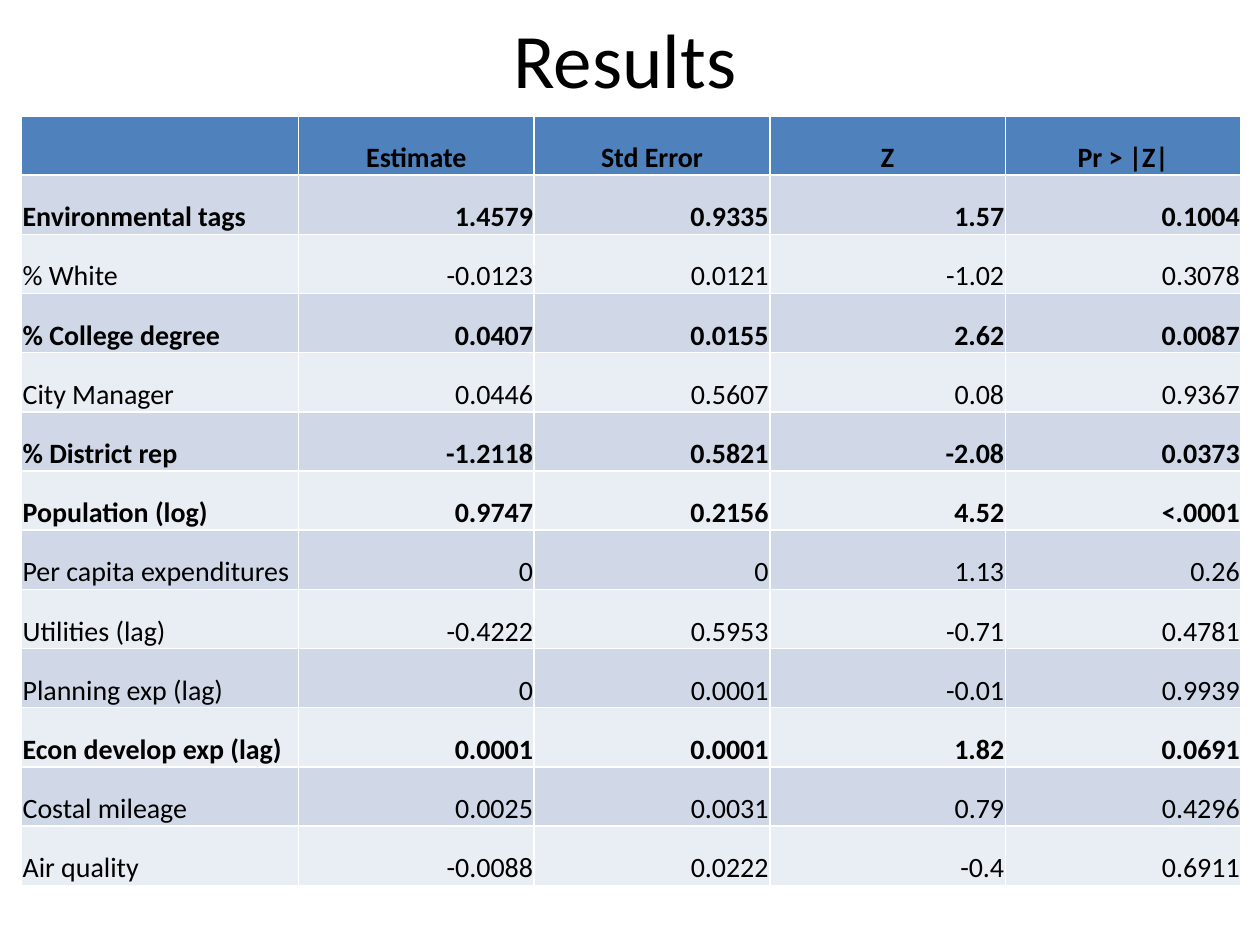
from dataclasses import dataclass
from typing import Any

from pptx import Presentation
from pptx.dml.color import RGBColor
from pptx.enum.text import MSO_ANCHOR, PP_ALIGN
from pptx.util import Inches, Pt


@dataclass
class Row:
    label: str
    values: tuple[str, ...]
    bold: bool = False


HEADER = Row("", ("Estimate", "Std Error", "Z", "Pr > |Z|"), True)
RESULTS = [
    Row("Environmental tags", ("1.4579", "0.9335", "1.57", "0.1004"), True),
    Row("% White", ("-0.0123", "0.0121", "-1.02", "0.3078")),
    Row("% College degree", ("0.0407", "0.0155", "2.62", "0.0087"), True),
    Row("City Manager", ("0.0446", "0.5607", "0.08", "0.9367")),
    Row("% District rep", ("-1.2118", "0.5821", "-2.08", "0.0373"), True),
    Row("Population (log)", ("0.9747", "0.2156", "4.52", "<.0001"), True),
    Row("Per capita expenditures", ("0", "0", "1.13", "0.26")),
    Row("Utilities (lag)", ("-0.4222", "0.5953", "-0.71", "0.4781")),
    Row("Planning exp (lag)", ("0", "0.0001", "-0.01", "0.9939")),
    Row("Econ develop exp (lag)", ("0.0001", "0.0001", "1.82", "0.0691"), True),
    Row("Costal mileage", ("0.0025", "0.0031", "0.79", "0.4296")),
    Row("Air quality", ("-0.0088", "0.0222", "-0.4", "0.6911")),
]
HEADER_FILL = "4F81BD"
BAND_FILLS = ("D0D8E8", "E9EDF4")
COL_WIDTHS = (2.2, 1.87, 1.87, 1.87, 1.87)
ROW_HEIGHT = 0.47
CELL_FORMAT = {
    "margin_left": Inches(0.01),
    "margin_right": Inches(0.01),
    "margin_top": Inches(0.01),
    "margin_bottom": 0,
    "vertical_anchor": MSO_ANCHOR.BOTTOM,
}


def set_format(obj: Any, values: dict[str, Any]) -> None:
    for name, value in values.items():
        setattr(obj, name, value)


def rgb(color: str) -> RGBColor:
    return RGBColor.from_string(color)


def write(p: Any, text: str, size: int, bold: bool, align: PP_ALIGN) -> None:
    p.alignment = align
    r = p.add_run()
    r.text = text
    set_format(r.font, {"name": "Calibri", "size": Pt(size), "bold": bold})
    r.font.color.rgb = rgb("000000")


def draw_row(cells: Any, row: Row, fill: str, value_align: PP_ALIGN) -> None:
    for i, (cell, text) in enumerate(zip(cells, (row.label, *row.values))):
        cell.fill.solid()
        cell.fill.fore_color.rgb = rgb(fill)
        set_format(cell, CELL_FORMAT)
        if text:
            align = value_align if i else PP_ALIGN.LEFT
            write(cell.text_frame.paragraphs[0], text, 16, row.bold, align)


def draw_title(s: Any, text: str) -> None:
    sp = s.shapes.title
    set_format(sp, {"left": Inches(0.5), "top": 0,
                    "width": Inches(8.92), "height": Inches(0.92)})
    tf = sp.text_frame
    tf.vertical_anchor = MSO_ANCHOR.MIDDLE
    write(tf.paragraphs[0], text, 44, False, PP_ALIGN.CENTER)


def draw_table(s: Any) -> None:
    count = len(RESULTS) + 1
    table = s.shapes.add_table(
        count, len(COL_WIDTHS), Inches(0.17), Inches(0.92),
        Inches(sum(COL_WIDTHS)), Inches(count * ROW_HEIGHT)).table
    for col, width in zip(table.columns, COL_WIDTHS):
        col.width = Inches(width)
    for row in table.rows:
        row.height = Inches(ROW_HEIGHT)
    draw_row(table.rows[0].cells, HEADER, HEADER_FILL, PP_ALIGN.CENTER)
    for i, result in enumerate(RESULTS):
        draw_row(table.rows[i + 1].cells, result, BAND_FILLS[i % 2], PP_ALIGN.RIGHT)


def main() -> None:
    prs = Presentation()
    set_format(prs, {"slide_width": Inches(10), "slide_height": Inches(7.5)})
    s = prs.slides.add_slide(prs.slide_layouts[5])
    draw_title(s, "Results")
    draw_table(s)
    prs.save("out.pptx")


if __name__ == "__main__":
    main()
